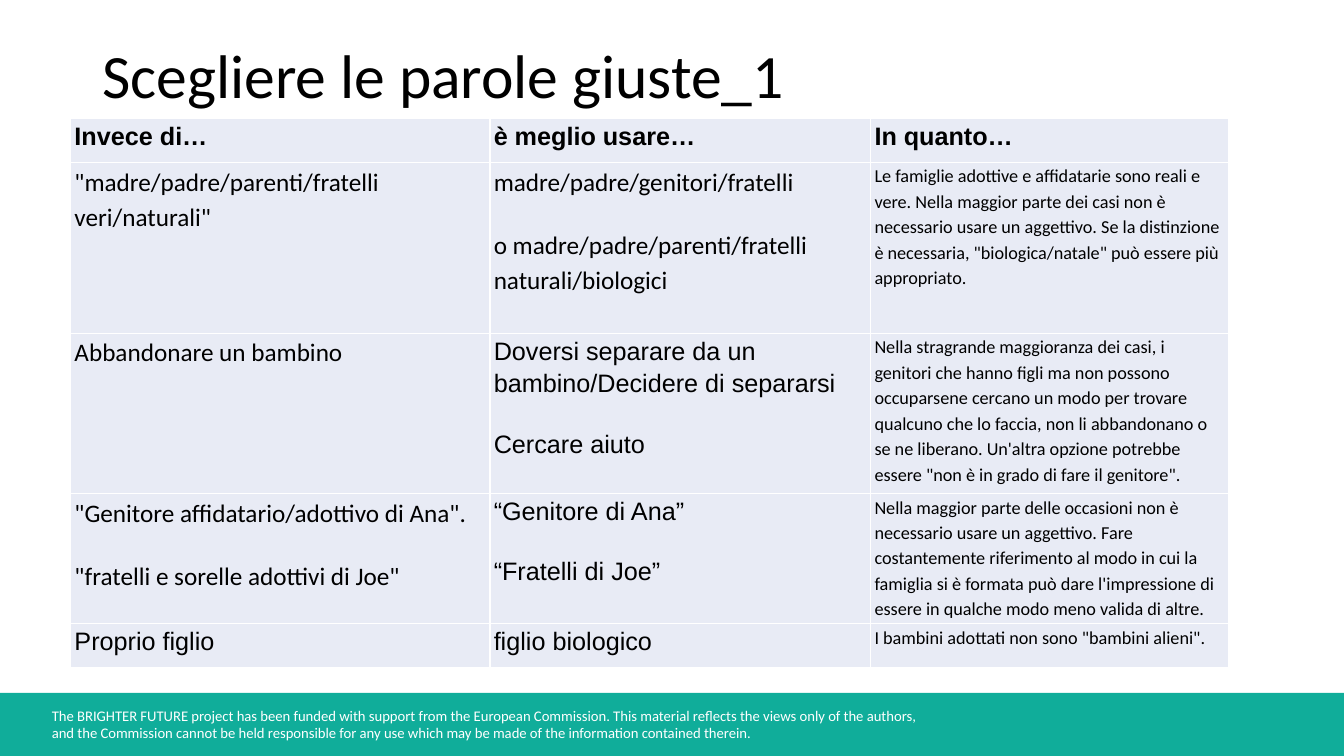
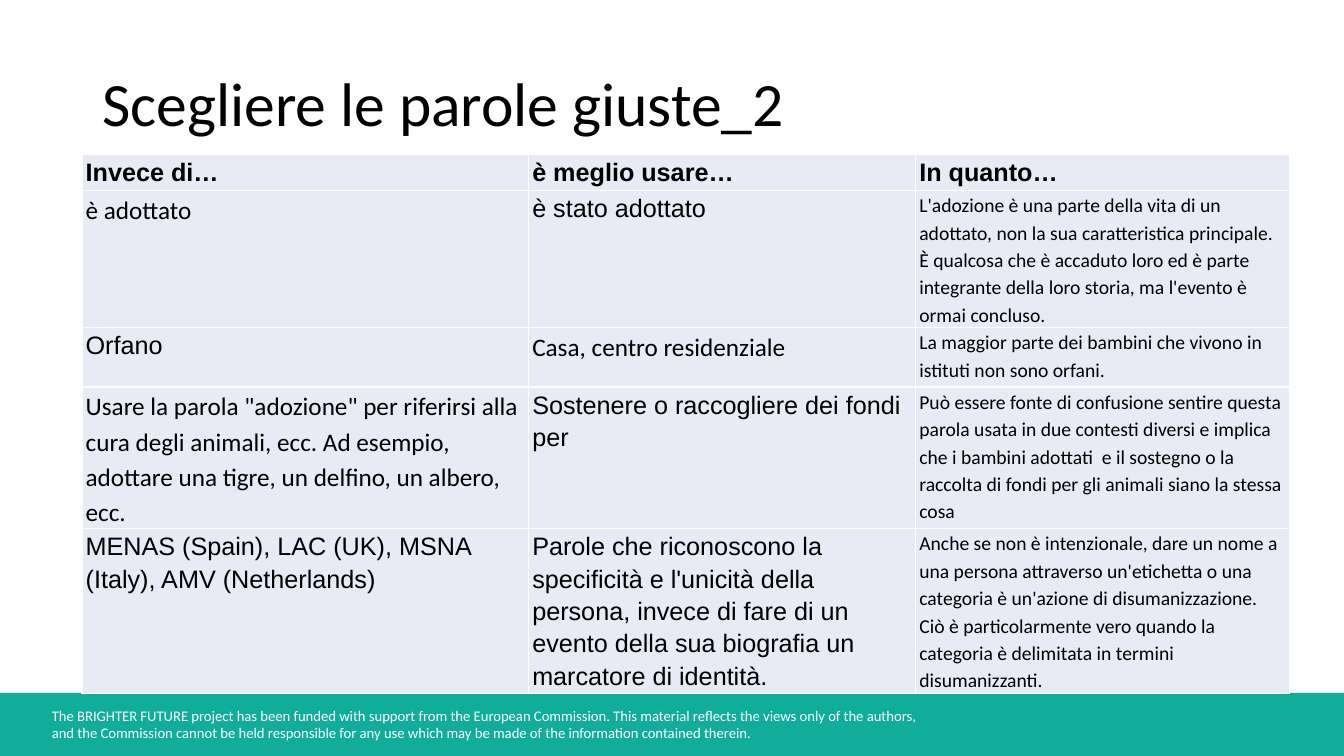
from lxml import etree
from pptx import Presentation
from pptx import util as u
from pptx.dml.color import RGBColor
from pptx.enum import shapes, text
from pptx.oxml import ns

Pt = u.Pt
COLORS = {"band": "10AD9A", "cell": "E8EBF5", "ink": "000000", "paper": "FFFFFF"}
SANS, ARIAL = "Calibri", "Arial"
WIDTH, HEIGHT = 960, 540
BAND_HEIGHT = 45

# Content: each row holds (font, text), (font, text), reason; a new line is a new paragraph
FOOTER = (
    "The BRIGHTER FUTURE project has been funded with support from the European Commission. "
    "This material reflects the views only of the authors,\n"
    "and the Commission cannot be held responsible for any use which may be made of "
    "the information contained therein."
)
HEADERS = ("Invece di…", "è meglio usare…", "In quanto…")
SLIDES = [
    {
        "title": "Scegliere le parole giuste_1",
        "title_height": 64,
        "table_at": (50.5, 84.5),
        "columns": (299.5, 272, 255.5),
        "heights": (31.5, 122, 114.5, 93, 31.5),
        "reason_size": 13,
        "rows": [
            ((SANS, '"madre/padre/parenti/fratelli veri/naturali"'),
             (SANS, "madre/padre/genitori/fratelli\n"
                    "o madre/padre/parenti/fratelli naturali/biologici"),
             "Le famiglie adottive e affidatarie sono reali e vere. Nella maggior parte dei casi "
             "non è necessario usare un aggettivo. Se la distinzione è necessaria, "
             '"biologica/natale" può essere più appropriato.'),
            ((SANS, "Abbandonare un bambino"),
             (ARIAL, "Doversi separare da un bambino/Decidere di separarsi\nCercare aiuto"),
             "Nella stragrande maggioranza dei casi, i genitori che hanno figli ma non possono "
             "occuparsene cercano un modo per trovare qualcuno che lo faccia, non li abbandonano "
             "o se ne liberano. Un'altra opzione potrebbe essere "
             '"non è in grado di fare il genitore".'),
            ((SANS, '"Genitore affidatario/adottivo di Ana".\n'
                    '"fratelli e sorelle adottivi di Joe"'),
             (ARIAL, "“Genitore di Ana”\n“Fratelli di Joe”"),
             "Nella maggior parte delle occasioni non è necessario usare un aggettivo. Fare "
             "costantemente riferimento al modo in cui la famiglia si è formata può dare "
             "l'impressione di essere in qualche modo meno valida di altre."),
            ((ARIAL, "Proprio figlio"),
             (ARIAL, "figlio biologico"),
             'I bambini adottati non sono "bambini alieni".'),
        ],
    },
    {
        "title": "Scegliere le parole giuste_2",
        "title_height": 104.5,
        "table_at": (58.5, 110),
        "columns": (319, 276.5, 267),
        "heights": (26, 83.5, 42.5, 83.5, 104.5),
        "reason_size": 14,
        "rows": [
            ((SANS, "è adottato"),
             (ARIAL, "è stato adottato"),
             "L'adozione è una parte della vita di un adottato, non la sua caratteristica "
             "principale. È qualcosa che è accaduto loro ed è parte integrante della loro storia, "
             "ma l'evento è ormai concluso."),
            ((ARIAL, "Orfano"),
             (SANS, "Casa, centro residenziale"),
             "La maggior parte dei bambini che vivono in istituti non sono orfani."),
            ((SANS, 'Usare la parola "adozione" per riferirsi alla cura degli animali, ecc. '
                    "Ad esempio, adottare una tigre, un delfino, un albero, ecc."),
             (ARIAL, "Sostenere o raccogliere dei fondi per"),
             "Può essere fonte di confusione sentire questa parola usata in due contesti diversi "
             "e implica che i bambini adottati  e il sostegno o la raccolta di fondi per gli "
             "animali siano la stessa cosa"),
            ((ARIAL, "MENAS (Spain), LAC (UK), MSNA (Italy), AMV (Netherlands)"),
             (ARIAL, "Parole che riconoscono la specificità e l'unicità della persona, invece "
                     "di fare di un evento della sua biografia un marcatore di identità."),
             "Anche se non è intenzionale, dare un nome a una persona attraverso un'etichetta o "
             "una categoria è un'azione di disumanizzazione. Ciò è particolarmente vero quando "
             "la categoria è delimitata in termini disumanizzanti."),
        ],
    },
]


def paint(fill, color):
    fill.solid()
    fill.fore_color.rgb = RGBColor.from_string(COLORS[color])


def write(frame, content, *, size, font=SANS, color="ink", bold=False, spacing=1.0, gap=0):
    """Write one paragraph per line, with a gap between paragraphs."""
    frame.word_wrap = True
    for index, line in enumerate(content.split("\n")):
        paragraph = frame.add_paragraph() if index else frame.paragraphs[0]
        paragraph.alignment = text.PP_ALIGN.LEFT
        paragraph.line_spacing = spacing
        paragraph.space_before = Pt(gap if index else 0)
        run = paragraph.add_run()
        run.text = line
        run.font.name, run.font.size, run.font.bold = font, Pt(size), bold
        run.font.color.rgb = RGBColor.from_string(COLORS[color])


def move_footer_to_layout(slide, layout):
    """Build the band and its text, then hand them to the shared layout."""
    band = slide.shapes.add_shape(
        shapes.MSO_SHAPE.RECTANGLE, 0, Pt(HEIGHT - BAND_HEIGHT), Pt(WIDTH), Pt(BAND_HEIGHT))
    band.shadow.inherit = False
    paint(band.fill, "band")
    band.line.fill.background()
    notice = slide.shapes.add_textbox(Pt(30), Pt(501), Pt(720), Pt(32.5))
    write(notice.text_frame, FOOTER, size=10.5, color="paper")
    for shape in (band, notice):
        layout.shapes.element.append(shape.element)


def add_title(slide, content, height):
    title = slide.shapes.title
    title.left, title.top, title.width, title.height = Pt(66), Pt(24), Pt(828), Pt(height)
    frame = title.text_frame
    frame.auto_size = text.MSO_AUTO_SIZE.NONE
    frame.vertical_anchor = text.MSO_ANCHOR.MIDDLE
    write(frame, content, size=44, spacing=0.9)


def format_cell(cell):
    cell.margin_left = cell.margin_right = Pt(2.7)
    cell.margin_top = cell.margin_bottom = 0
    properties = cell._tc.get_or_add_tcPr()
    for side in ("a:lnL", "a:lnR", "a:lnT", "a:lnB"):
        line = etree.SubElement(properties, ns.qn(side), w=str(Pt(1)))
        fill = etree.SubElement(line, ns.qn("a:solidFill"))
        etree.SubElement(fill, ns.qn("a:srgbClr"), val=COLORS["paper"])
    paint(cell.fill, "cell")


def add_word_table(slide, data):
    left, top = data["table_at"]
    columns, heights = data["columns"], data["heights"]
    table = slide.shapes.add_table(
        len(heights), len(columns), Pt(left), Pt(top), Pt(sum(columns)), Pt(sum(heights))).table
    table.first_row = table.horz_banding = False
    for column, width in zip(table.columns, columns):
        column.width = Pt(width)
    for row, height in zip(table.rows, heights):
        row.height = Pt(height)

    header = [(ARIAL, label, 18) for label in HEADERS]
    body = [
        [(*instead, 18), (*better, 18), (SANS, reason, data["reason_size"])]
        for instead, better, reason in data["rows"]
    ]
    for row_index, entries in enumerate([header, *body]):
        for column_index, (font, content, size) in enumerate(entries):
            cell = table.cell(row_index, column_index)
            format_cell(cell)
            write(cell.text_frame, content, size=size, font=font,
                  bold=row_index == 0, spacing=1.15, gap=20)


def main():
    presentation = Presentation()
    presentation.slide_width, presentation.slide_height = Pt(WIDTH), Pt(HEIGHT)
    layout = presentation.slide_layouts.get_by_name("Title Only")
    for index, data in enumerate(SLIDES):
        slide = presentation.slides.add_slide(layout)
        if index == 0:
            move_footer_to_layout(slide, layout)
        add_title(slide, data["title"], data["title_height"])
        add_word_table(slide, data)
    presentation.save("out.pptx")


if __name__ == "__main__":
    main()
